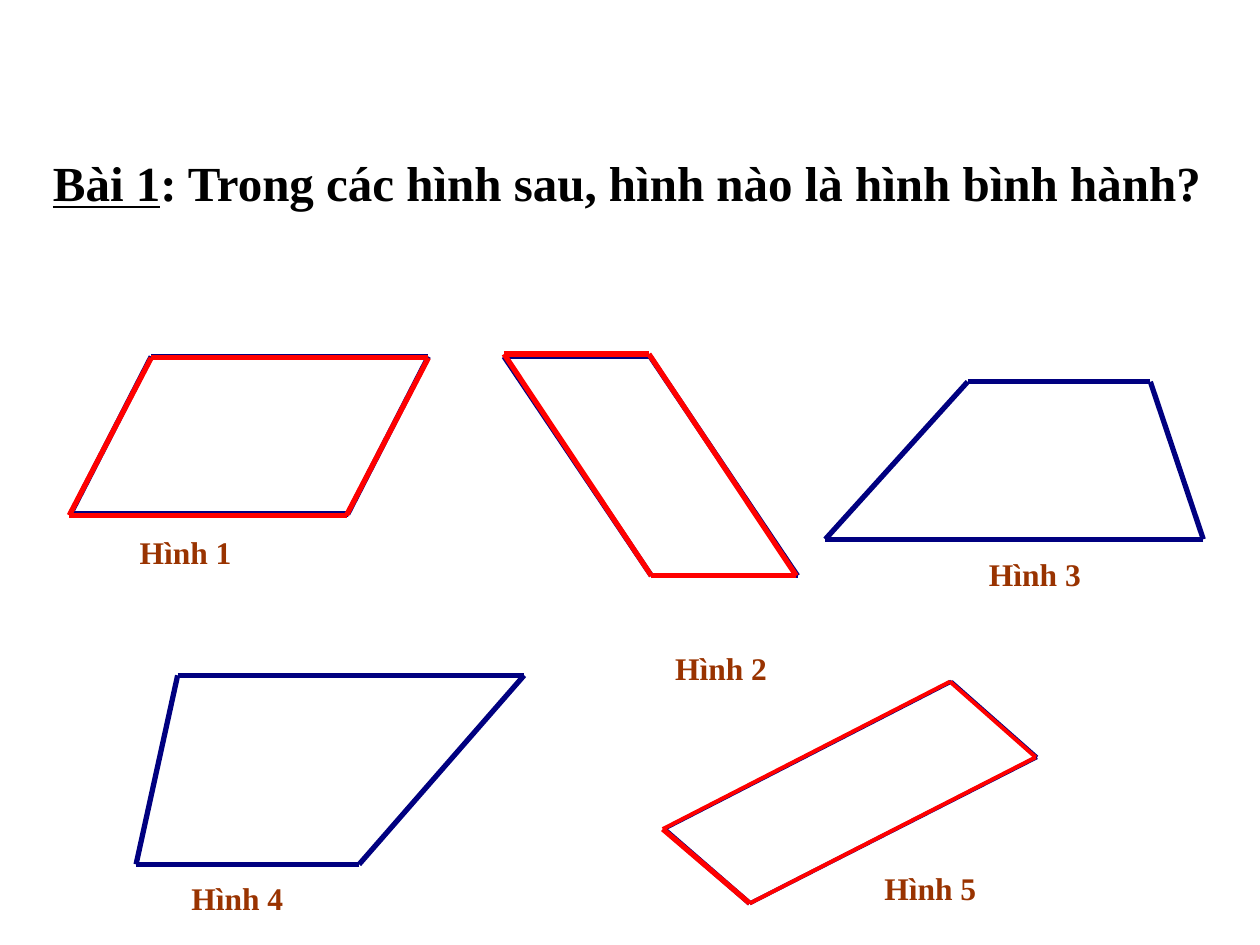
"""Build a geometry exercise slide asking which of five figures are parallelograms."""
from lxml import etree
from pptx import Presentation
from pptx import util as u
from pptx.dml.color import RGBColor
from pptx.enum import shapes, text
from pptx.oxml.ns import qn

COLORS = {"navy": "000080", "red": "FF0000", "brown": "993300", "black": "000000"}

deck = Presentation()
deck.slide_width, deck.slide_height = u.Inches(10), u.Inches(7.5)
column, row = deck.slide_width / 100, deck.slide_height / 75
page = deck.slides.add_slide(deck.slide_layouts[5])


def draw_figure(corners, color, widths):
    figure = page.shapes.add_group_shape()
    for start, end, width in zip(corners, corners[1:] + corners[:1], widths):
        side = figure.shapes.add_connector(
            shapes.MSO_CONNECTOR.STRAIGHT,
            round(start[0] * column), round(start[1] * row),
            round(end[0] * column), round(end[1] * row))
        side.line.color.rgb = RGBColor.from_string(COLORS[color])
        side.line.width = u.Pt(width)
        etree.SubElement(side._element.spPr, qn("a:effectLst"))


def format_text(box, place, size, color):
    left, top, width, height = place
    box.left, box.top = round(left * column), round(top * row)
    box.width, box.height = round(width * column), round(height * row)
    frame = box.text_frame
    frame.word_wrap = True
    frame.auto_size = text.MSO_AUTO_SIZE.SHAPE_TO_FIT_TEXT
    frame.vertical_anchor = text.MSO_ANCHOR.TOP
    para = frame.paragraphs[0]
    para.alignment = text.PP_ALIGN.LEFT
    para.font.name = "Times New Roman"
    para.font.size = u.Pt(size)
    para.font.bold = True
    para.font.color.rgb = RGBColor.from_string(COLORS[color])


title = page.shapes.title
para = title.text_frame.paragraphs[0]
for words, underlined in (("Bài 1", True),
                          (": Trong các hình sau, hình nào là hình bình hành?", False)):
    span = para.add_run()
    span.text = words
    span.font.underline = underlined
format_text(title, (3.2, 11.6, 96.7, 5.7), 28, "black")

even = (3, 3, 3, 3)
slanted = (2.25, 2.25, 2.25, 3)
figures = [
    ([(12, 28.3), (34, 28.3), (27.6, 40.8), (5.6, 40.8)], "navy", even),
    ([(40, 28.3), (51.6, 28.3), (63.3, 45.7), (51.7, 45.7)], "navy", even),
    ([(76.8, 30.3), (91.3, 30.3), (95.5, 42.8), (65.5, 42.8)], "navy", even),
    ([(14.1, 53.6), (41.6, 53.6), (28.5, 68.6), (10.8, 68.6)], "navy", even),
    ([(52.7, 65.8), (75.5, 54.1), (82.3, 60.1), (59.5, 71.7)], "navy", slanted),
    ([(12, 28.4), (34, 28.4), (27.5, 40.9), (5.5, 40.9)], "red", even),
    ([(40, 28.1), (51.5, 28.1), (63.2, 45.7), (51.7, 45.7)], "red", even),
    ([(52.6, 65.8), (75.4, 54.1), (82.2, 60.1), (59.5, 71.7)], "red", slanted),
]
for corners, color, widths in figures:
    draw_figure(corners, color, widths)

label_corners = [(10.1, 41.8), (52.6, 51), (77.5, 43.6), (14.2, 69.3), (69.2, 68.5)]
for number, (left, top) in enumerate(label_corners, start=1):
    label = page.shapes.add_textbox(0, 0, 0, 0)
    label.text_frame.text = f"Hình {number}"
    format_text(label, (left, top, 10.8, 4), 18, "brown")

deck.save("out.pptx")
